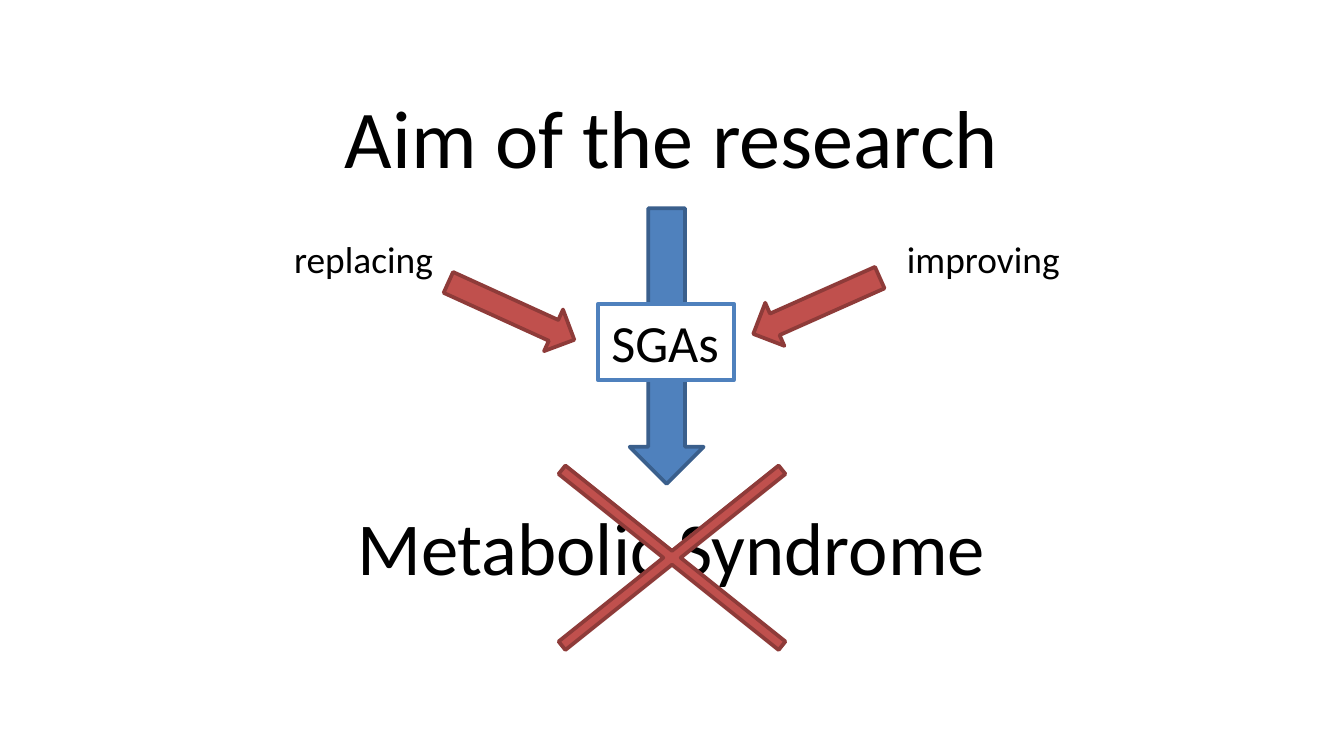
from pptx import Presentation
from pptx.dml.color import RGBColor
from pptx.enum.shapes import MSO_SHAPE
from pptx.enum.text import MSO_ANCHOR, PP_ALIGN
from pptx.util import Pt

PX = 4572
SLIDE = (2000, 1125)
FONT = "Calibri"
COLORS = {
    "text": "000000",
    "white": "FFFFFF",
    "blue": "4F81BD",
    "blue_edge": "3A5F8C",
    "red": "C0504D",
    "red_edge": "8E3B39",
}

TITLE = ("Aim of the research", (100, 108, 1800, 188), 44)
OUTCOME = ("Metabolic Syndrome", (512, 736, 984, 154), 40)
DRUGS = ("SGAs", (890, 452, 202, 114), 28)
DOWN_ARROW = (937, 310, 110, 410)
CROSS = (685, 578, 630, 504)
CROSS_THICKNESS = 0.032
APPROACHES = [
    {"label": "improving", "label_box": (1330, 342, 346, 88),
     "arrow_box": (1112, 420, 206, 70), "rotation": 156},
    {"label": "replacing", "label_box": (418, 342, 252, 88),
     "arrow_box": (658, 429, 206, 68), "rotation": 24.5},
]


def emu(box):
    return [length * PX for length in box]


def color(name):
    return RGBColor.from_string(COLORS[name])


def write(shape, text, size, wrap=True, align=PP_ALIGN.LEFT, anchor=MSO_ANCHOR.TOP):
    frame = shape.text_frame
    for name, value in {"word_wrap": wrap, "vertical_anchor": anchor}.items():
        setattr(frame, name, value)
    para = frame.paragraphs[0]
    para.alignment = align
    span = para.add_run()
    span.text = text
    for name, value in {"name": FONT, "size": Pt(size)}.items():
        setattr(span.font, name, value)
    span.font.color.rgb = color("text")


def add_label(page, text, box, size, wrap=True):
    label = page.shapes.add_textbox(*emu(box))
    write(label, text, size, wrap)
    return label


def add_figure(page, kind, box, fill, edge, rotation=0):
    figure = page.shapes.add_shape(kind, *emu(box))
    figure.shadow.inherit = False
    figure.rotation = rotation
    figure.fill.solid()
    figure.fill.fore_color.rgb = color(fill)
    figure.line.color.rgb = color(edge)
    figure.line.width = Pt(2)
    return figure


def add_approach(page, approach):
    arrow = add_figure(page, MSO_SHAPE.RIGHT_ARROW, approach["arrow_box"],
                       "red", "red_edge", approach["rotation"])
    label = add_label(page, approach["label"], approach["label_box"], 20)
    page.shapes.add_group_shape([arrow, label])


def main():
    deck = Presentation()
    deck.slide_width, deck.slide_height = emu(SLIDE)
    page = deck.slides.add_slide(deck.slide_layouts[5])

    text, box, size = TITLE
    title = page.shapes.title
    title.left, title.top, title.width, title.height = emu(box)
    write(title, text, size, align=PP_ALIGN.CENTER, anchor=MSO_ANCHOR.MIDDLE)

    add_figure(page, MSO_SHAPE.DOWN_ARROW, DOWN_ARROW, "blue", "blue_edge")
    add_label(page, *OUTCOME, wrap=False)
    cross = add_figure(page, MSO_SHAPE.MATH_MULTIPLY, CROSS, "red", "red_edge")
    cross.adjustments[0] = CROSS_THICKNESS

    text, box, size = DRUGS
    drugs = add_figure(page, MSO_SHAPE.RECTANGLE, box, "white", "blue")
    write(drugs, text, size, wrap=False)

    for approach in APPROACHES:
        add_approach(page, approach)

    deck.save("out.pptx")


if __name__ == "__main__":
    main()
